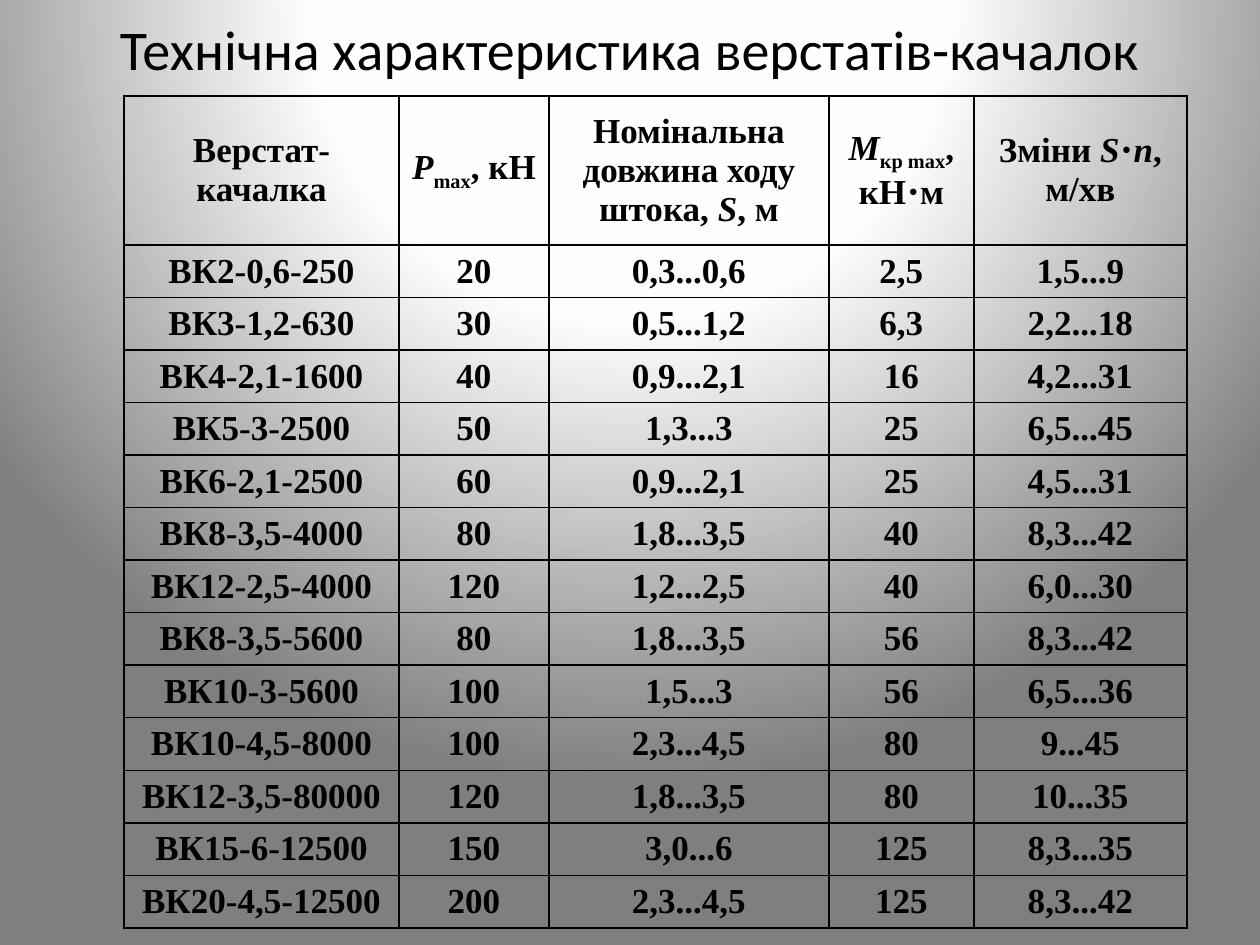
from pptx import Presentation
from pptx.dml.color import RGBColor
from pptx.enum.text import MSO_ANCHOR, PP_ALIGN
from pptx.oxml import parse_xml
from pptx.oxml.ns import nsdecls
from pptx.util import Pt

PX = 914400 // 126  # EMU in one px
BLACK = "000000"
TITLE = "Технічна характеристика верстатів-качалок"
COLUMN_WIDTHS = [275, 150, 280, 145, 213]
HEADER_HEIGHT = 149

# Header cells: runs of (text, style)
HEADER = [
    [("Верстат-качалка", "")],
    [("Р", "italic"), ("max", "sub"), (", кН", "")],
    [("Номінальна довжина ходу штока, ", ""), ("S", "italic"), (", м", "")],
    [("M", "italic"), ("кр max", "sub"), (", кН⋅м", "")],
    [("Зміни ", ""), ("S⋅n", "italic"), (", м/хв", "")],
]
PUMP_UNITS = [
    ("ВК2-0,6-250", "20", "0,3...0,6", "2,5", "1,5...9"),
    ("ВК3-1,2-630", "30", "0,5...1,2", "6,3", "2,2...18"),
    ("ВК4-2,1-1600", "40", "0,9...2,1", "16", "4,2...31"),
    ("ВК5-3-2500", "50", "1,3...3", "25", "6,5...45"),
    ("ВК6-2,1-2500", "60", "0,9...2,1", "25", "4,5...31"),
    ("ВК8-3,5-4000", "80", "1,8...3,5", "40", "8,3...42"),
    ("ВК12-2,5-4000", "120", "1,2...2,5", "40", "6,0...30"),
    ("ВК8-3,5-5600", "80", "1,8...3,5", "56", "8,3...42"),
    ("ВК10-3-5600", "100", "1,5...3", "56", "6,5...36"),
    ("ВК10-4,5-8000", "100", "2,3...4,5", "80", "9...45"),
    ("ВК12-3,5-80000", "120", "1,8...3,5", "80", "10...35"),
    ("ВК15-6-12500", "150", "3,0...6", "125", "8,3...35"),
    ("ВК20-4,5-12500", "200", "2,3...4,5", "125", "8,3...42"),
]

TITLE_FONT = {"name": "Calibri", "size": Pt(32)}
CELL_FONT = {"name": "Times New Roman", "size": Pt(20), "bold": True}
CELL_FORMAT = {
    "vertical_anchor": MSO_ANCHOR.MIDDLE,
    "margin_left": 6 * PX, "margin_right": 6 * PX,
    "margin_top": 0, "margin_bottom": 0,
}
TABLE_FORMAT = {"first_row": False, "horz_banding": False}


def color(hex_value):
    return RGBColor.from_string(hex_value)


def apply(target, values):
    for key, value in values.items():
        setattr(target, key, value)


def write_runs(frame, runs, font):
    paragraph = frame.paragraphs[0]
    paragraph.alignment = PP_ALIGN.CENTER
    for text, style in runs:
        run = paragraph.add_run()
        run.text = text
        apply(run.font, font)
        run.font.color.rgb = color(BLACK)
        if style == "italic":
            run.font.italic = True
        elif style == "sub":
            run.font._element.set("baseline", "-25000")


def paint_background(slide):
    stops = "".join(
        f'<a:gs pos="{percent * 1000}"><a:srgbClr val="{tone}"/></a:gs>'
        for percent, tone in [(0, "FFFFFF"), (40, "FEFEFE"), (100, "7F7F7F")])
    slide.element.cSld.insert(0, parse_xml(
        f'<p:bg {nsdecls("p", "a")}><p:bgPr><a:gradFill rotWithShape="1">'
        f'<a:gsLst>{stops}</a:gsLst><a:path path="circle">'
        '<a:fillToRect l="50000" t="-80000" r="50000" b="180000"/></a:path>'
        '</a:gradFill><a:effectLst/></p:bgPr></p:bg>'))


def add_title(slide, left, top, width, height):
    heading = slide.shapes.add_textbox(left * PX, top * PX, width * PX, height * PX)
    apply(heading.text_frame,
          {"word_wrap": True, "vertical_anchor": MSO_ANCHOR.MIDDLE})
    write_runs(heading.text_frame, [(TITLE, "")], TITLE_FONT)


def add_borders(cell):
    properties = cell._tc.get_or_add_tcPr()
    for position, side in enumerate(("lnL", "lnR", "lnT", "lnB")):
        properties.insert(position, parse_xml(
            f'<a:{side} {nsdecls("a")} w="12700"><a:solidFill>'
            f'<a:srgbClr val="{BLACK}"/></a:solidFill></a:{side}>'))


def add_characteristics(slide, left, top, width, height):
    rows = [HEADER] + [[[(value, "")] for value in unit] for unit in PUMP_UNITS]
    table = slide.shapes.add_table(
        len(rows), len(HEADER), left * PX, top * PX, width * PX, height * PX).table
    apply(table, TABLE_FORMAT)
    for column, column_width in zip(table.columns, COLUMN_WIDTHS):
        column.width = column_width * PX
    unit_height = (height - HEADER_HEIGHT) * PX // len(PUMP_UNITS)
    for index, row in enumerate(rows):
        table.rows[index].height = unit_height if index else HEADER_HEIGHT * PX
        for cell, runs in zip(table.rows[index].cells, row):
            apply(cell, CELL_FORMAT)
            cell.fill.background()
            add_borders(cell)
            write_runs(cell.text_frame, runs, CELL_FONT)


def main():
    deck = Presentation()
    apply(deck, {"slide_width": 1260 * PX, "slide_height": 945 * PX})
    slide = deck.slides.add_slide(deck.slide_layouts[6])
    paint_background(slide)
    add_title(slide, 63, 0, 1134, 96)
    add_characteristics(slide, 124, 96, sum(COLUMN_WIDTHS), 832)
    deck.save("out.pptx")


if __name__ == "__main__":
    main()
